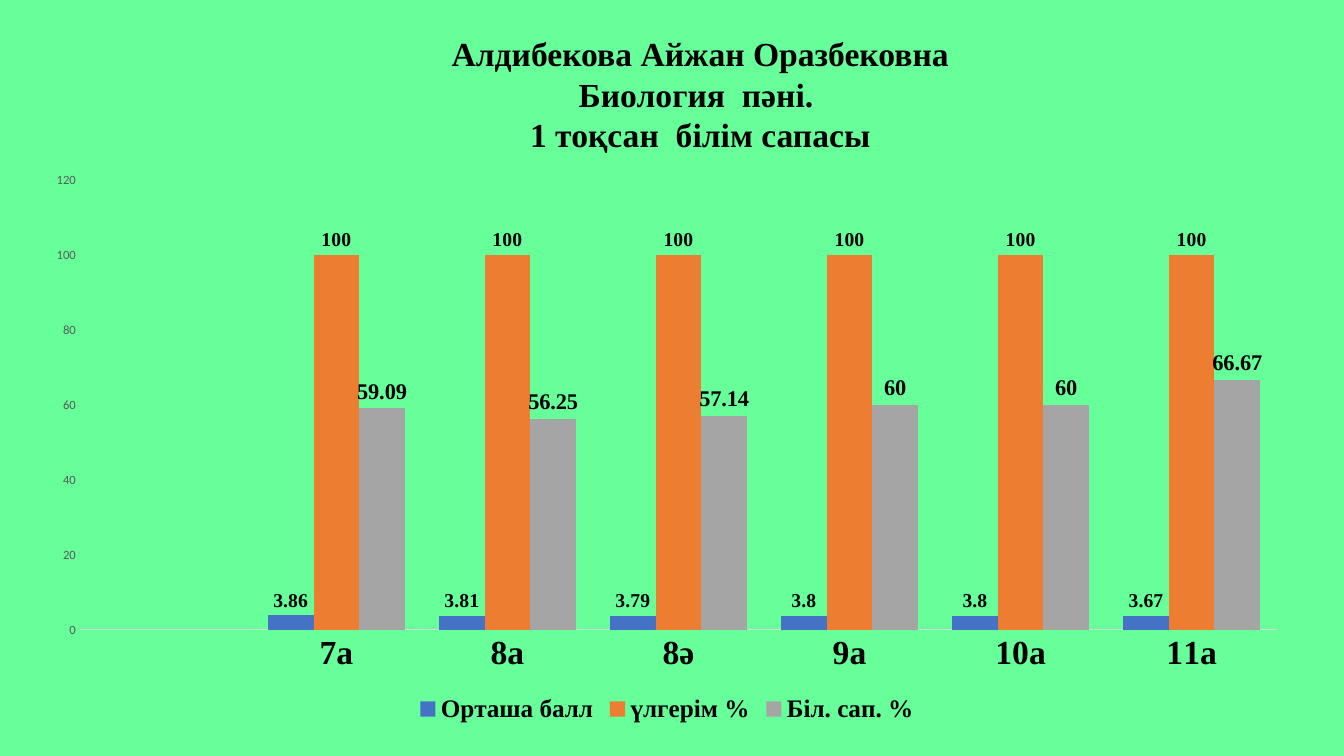
from dataclasses import dataclass

from pptx import Presentation
from pptx.chart.data import CategoryChartData
from pptx.dml.color import RGBColor
from pptx.enum.chart import XL_CHART_TYPE, XL_LABEL_POSITION, XL_LEGEND_POSITION, XL_TICK_MARK
from pptx.enum.text import MSO_AUTO_SIZE, PP_ALIGN
from pptx.util import Inches, Pt


@dataclass(frozen=True)
class Theme:
    background: str = "66FF99"
    text: str = "000000"
    muted: str = "595959"
    axis_line: str = "D9D9D9"
    heading_font: str = "Times New Roman"
    body_font: str = "Calibri"
    heading_size: int = 24
    legend_size: int = 18
    base_size: int = 10
    scale_size: int = 9


theme = Theme()


def style_font(font, size, name=theme.heading_font, color=theme.text, bold=True):
    font.name = name
    font.size = Pt(size)
    font.bold = bold
    font.color.rgb = RGBColor.from_string(color)


TITLE = ["Алдибекова Айжан Оразбековна", "Биология  пәні. ", "1 тоқсан  білім сапасы"]
CLASSES = ["", "7а", "8а", "8ә", "9а", "10а", "11а"]
# name, values, bar colour, label size
SERIES = [
    ("Орташа балл", [None, 3.86, 3.81, 3.79, 3.8, 3.8, 3.67], "4472C4", 14),
    ("үлгерім %", [None] + [100] * 6, "ED7D31", 14),
    ("Біл. сап. %", [None, 59.09, 56.25, 57.14, 60, 60, 66.67], "A5A5A5", 16),
]

prs = Presentation()
prs.slide_width = Inches(13.33)
prs.slide_height = Inches(7.5)
s = prs.slides.add_slide(prs.slide_layouts[6])
s.background.fill.solid()
s.background.fill.fore_color.rgb = RGBColor.from_string(theme.background)

# Title
tf = s.shapes.add_textbox(Inches(3.61), Inches(0.28), Inches(6.67), Inches(1.31)).text_frame
tf.word_wrap = True
tf.auto_size = MSO_AUTO_SIZE.SHAPE_TO_FIT_TEXT
for i, line in enumerate(TITLE):
    p = tf.add_paragraph() if i else tf.paragraphs[0]
    p.text = line
    p.alignment = PP_ALIGN.CENTER
    style_font(p.font, theme.heading_size)

# Chart of results by class
data = CategoryChartData()
data.categories = CLASSES
for name, values, color, label_size in SERIES:
    data.add_series(name, values)
chart = s.shapes.add_chart(XL_CHART_TYPE.COLUMN_CLUSTERED, Inches(0.31), Inches(1.6),
                           Inches(12.61), Inches(5.62), data).chart
chart.has_title = False
style_font(chart.font, theme.base_size, theme.body_font, bold=False)

# Bars and their labels
plot = chart.plots[0]
plot.gap_width = 75
plot.overlap = 0
plot.vary_by_categories = False
for series, (name, values, color, label_size) in zip(plot.series, SERIES):
    series.format.fill.solid()
    series.format.fill.fore_color.rgb = RGBColor.from_string(color)
    series.invert_if_negative = False
    labels = series.data_labels
    labels.show_value = True
    labels.position = XL_LABEL_POSITION.OUTSIDE_END
    style_font(labels.font, label_size)

# Axes
classes_axis, scale_axis = chart.category_axis, chart.value_axis
for axis in (classes_axis, scale_axis):
    axis.major_tick_mark = XL_TICK_MARK.NONE
    axis.minor_tick_mark = XL_TICK_MARK.NONE
    axis.has_major_gridlines = False
style_font(classes_axis.tick_labels.font, theme.heading_size)
classes_axis.format.line.color.rgb = RGBColor.from_string(theme.axis_line)
classes_axis.format.line.width = Pt(0.75)
style_font(scale_axis.tick_labels.font, theme.scale_size, theme.body_font, theme.muted, False)
scale_axis.format.line.fill.background()
scale_axis.minimum_scale = 0
scale_axis.maximum_scale = 120
scale_axis.major_unit = 20

# Legend
chart.has_legend = True
chart.legend.position = XL_LEGEND_POSITION.BOTTOM
chart.legend.include_in_layout = False
style_font(chart.legend.font, theme.legend_size)

prs.save("out.pptx")
